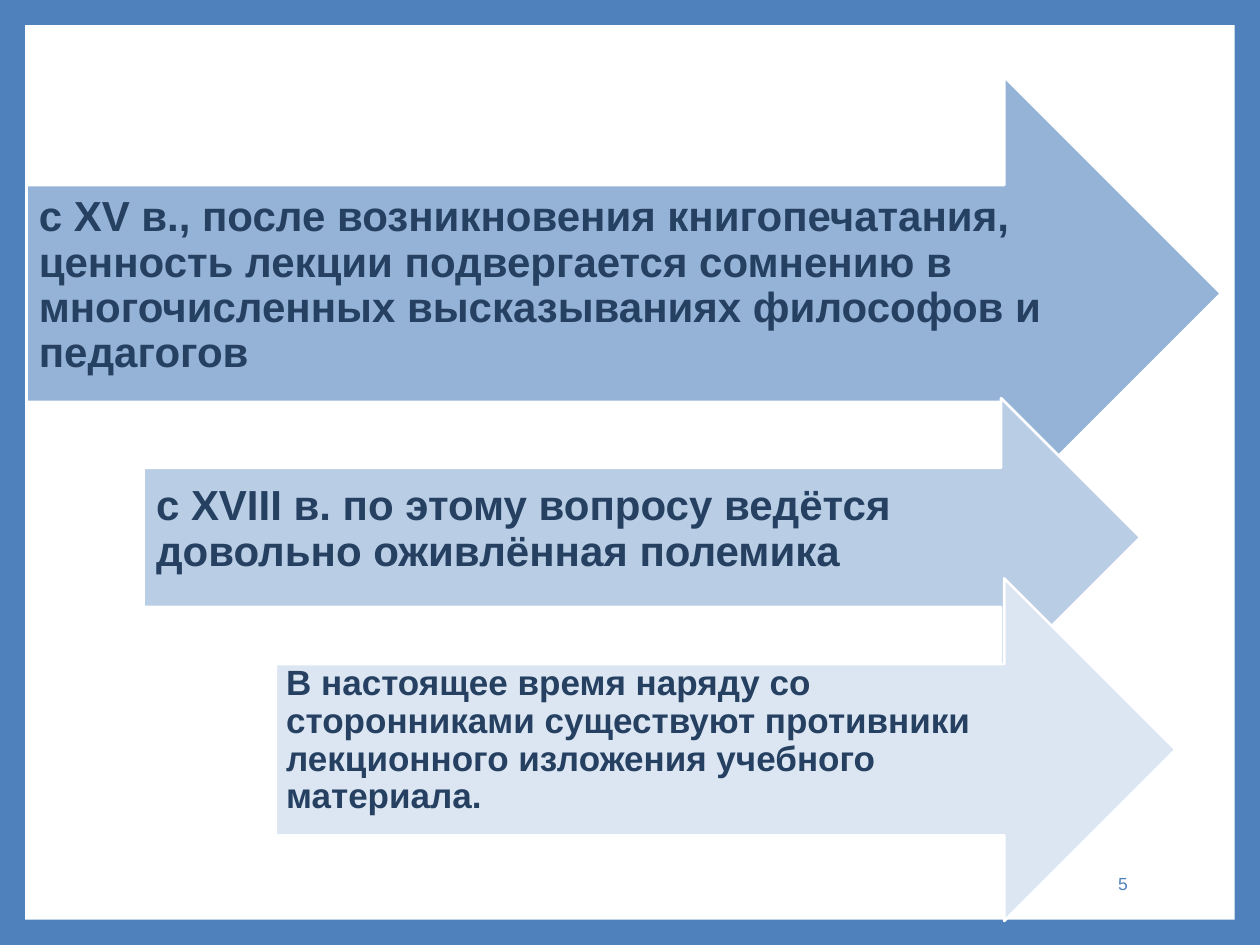
from pptx import Presentation
from pptx.dml.color import RGBColor
from pptx.enum.shapes import MSO_SHAPE
from pptx.enum.text import MSO_ANCHOR, PP_ALIGN
from pptx.util import Pt

BLUE = RGBColor(0x4F, 0x81, 0xBD)
NAVY = RGBColor(0x25, 0x40, 0x61)
WHITE = RGBColor(0xFF, 0xFF, 0xFF)
MEDIUM_BLUE = RGBColor(0x95, 0xB3, 0xD7)
LIGHT_BLUE = RGBColor(0xB9, 0xCD, 0xE5)
PALE_BLUE = RGBColor(0xDC, 0xE6, 0xF2)


def add_text(page, left, top, width, height, text, size, color):
    box = page.shapes.add_textbox(Pt(left), Pt(top), Pt(width), Pt(height))
    frame = box.text_frame
    frame.word_wrap = True
    frame.vertical_anchor = MSO_ANCHOR.MIDDLE
    frame.text = text
    font = frame.paragraphs[0].runs[0].font
    font.name = "Arial"
    font.size = Pt(size)
    font.color.rgb = color
    return frame


deck = Presentation()
deck.slide_width = Pt(720)
deck.slide_height = Pt(540)
page = deck.slides.add_slide(deck.slide_layouts[6])
page.background.fill.solid()
page.background.fill.fore_color.rgb = BLUE

panel = page.shapes.add_shape(MSO_SHAPE.RECTANGLE, Pt(14.4), Pt(14.4), Pt(691.2), Pt(511.2))
panel.shadow.inherit = False
panel.fill.solid()
panel.fill.fore_color.rgb = WHITE
panel.line.fill.background()

number = add_text(page, 550.8, 490.3, 100.8, 28.8, "5", 10, BLUE)
number.paragraphs[0].alignment = PP_ALIGN.RIGHT

periods = [
    (15.1, 43.9, 682.6, 247.7, MEDIUM_BLUE, 24, 7.2,
     "с ХV в., после возникновения книгопечатания, ценность лекции подвергается "
     "сомнению в многочисленных высказываниях философов и педагогов"),
    (82.1, 227.5, 569.5, 159.1, LIGHT_BLUE, 24, 7.2,
     "с ХVIII в. по этому вопросу ведётся довольно оживлённая полемика"),
    (157.7, 330.5, 514.1, 195.8, PALE_BLUE, 20, 5.8,
     "В настоящее время наряду со сторонниками существуют противники "
     "лекционного изложения учебного материала."),
]

for left, top, width, height, color, size, inset, text in periods:
    arrow = page.shapes.add_shape(MSO_SHAPE.RIGHT_ARROW, Pt(left), Pt(top), Pt(width), Pt(height))
    arrow.shadow.inherit = False
    arrow.fill.solid()
    arrow.fill.fore_color.rgb = color
    arrow.line.color.rgb = WHITE
    arrow.line.width = Pt(1.5)

    frame = add_text(page, left, top + height / 4, width - height / 4, height / 2, text, size, NAVY)
    frame.margin_left = frame.margin_top = Pt(inset)
    frame.margin_right = Pt(20.2)
    frame.margin_bottom = Pt(15.8)
    para = frame.paragraphs[0]
    para.line_spacing = 0.9
    para.runs[0].font.bold = True

deck.save("out.pptx")
